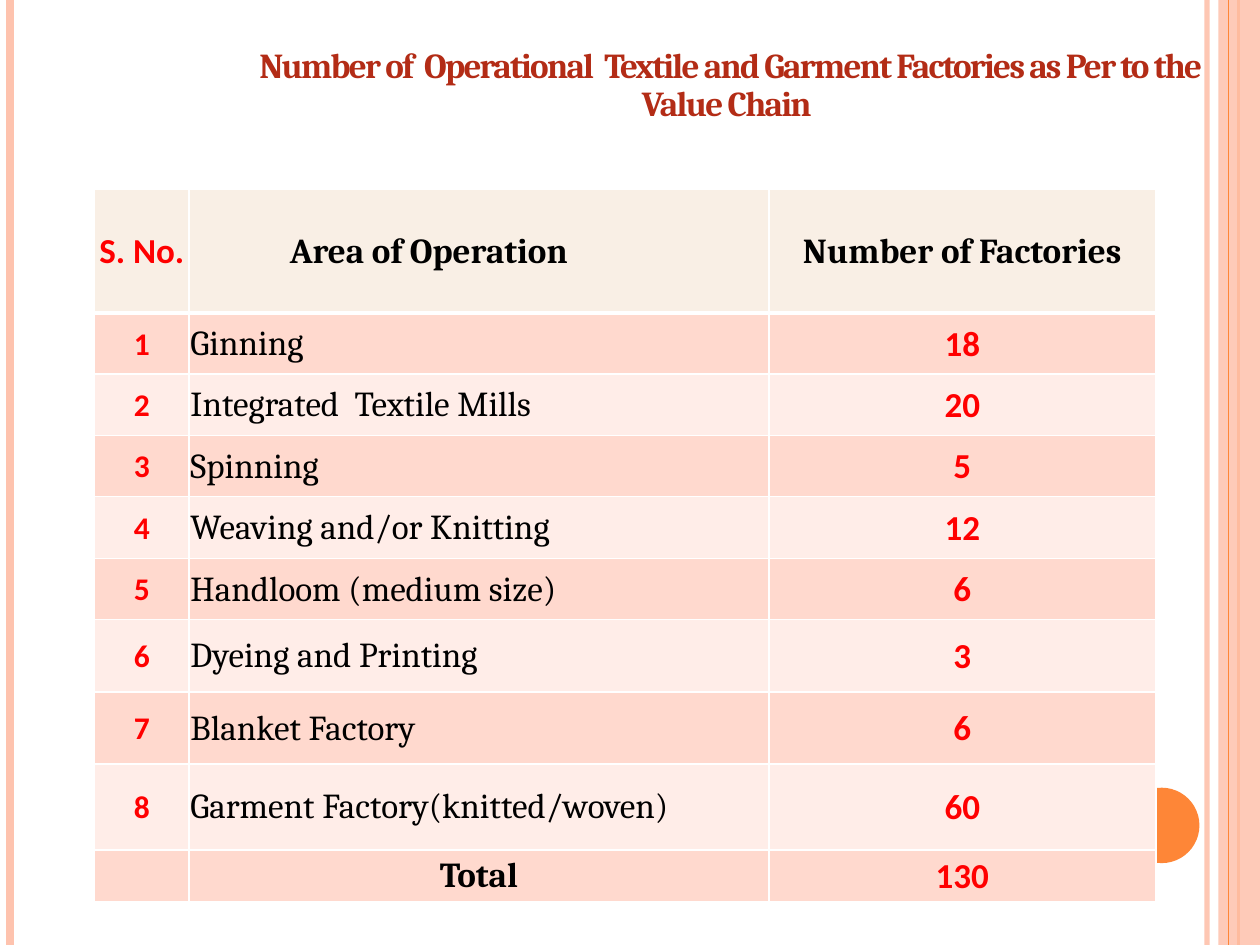
from lxml import etree
from pptx import Presentation
from pptx.dml.color import RGBColor
from pptx.enum.shapes import MSO_CONNECTOR, MSO_SHAPE
from pptx.enum.text import MSO_ANCHOR, MSO_AUTO_SIZE, PP_ALIGN
from pptx.oxml import parse_xml
from pptx.oxml.ns import nsdecls, qn
from pptx.util import Cm, Pt

CENTER, LEFT = PP_ALIGN.CENTER, PP_ALIGN.LEFT
MIDDLE, TOP = MSO_ANCHOR.MIDDLE, MSO_ANCHOR.TOP
STRAIGHT = MSO_CONNECTOR.STRAIGHT
RECTANGLE, OVAL = MSO_SHAPE.RECTANGLE, MSO_SHAPE.OVAL

THEME = {
    "peach": "FEC3AE", "orange": "FE8637", "header": "CC6600",
    "bands": ("FFEDE8", "FFD9CE"), "border": "FFFFFF",
    "title": "B32C16", "red": "FF0000", "black": "000000",
    "serif": "Cambria", "sans": "Calibri",
    "text_size": 20, "index_size": 18,
}


def set_opacity(fill, colour, percent):
    """Make the fill solid and, below 100 percent, see-through."""
    fill.solid()
    fill.fore_color.rgb = RGBColor.from_string(colour)
    if percent < 100:
        solid = fill._xPr.find(qn("a:solidFill"))
        etree.SubElement(solid[0], qn("a:alpha"), val=str(percent * 1000))


def write_text(para, text, face, colour, size, bold, align):
    para.alignment = align
    span = para.add_run()
    span.text = text
    formats = {"name": face, "size": Pt(size), "bold": bold}
    for name, value in formats.items():
        setattr(span.font, name, value)
    span.font.color.rgb = RGBColor.from_string(colour)
    return span


deck = Presentation()
deck.slide_width, deck.slide_height = Cm(25.4), Cm(19.05)
page = deck.slides.add_slide(deck.slide_layouts[5])

# Side stripes and circle: x, width in points, colour, opacity
back_stripes = [
    (24.33, 3, THEME["peach"], 93),
    (0.2, 4.5, THEME["peach"], 100),
    (24.97, 1.5, THEME["orange"], 100),
]
front_stripes = [(24.77, 0.75, THEME["orange"], 100)]
side_band = [(RECTANGLE, 24.56, 0, 0.84, 19.05, THEME["peach"], 87)]
circle = [(OVAL, 22.66, 15.88, 1.52, 1.52, THEME["orange"], 100)]

for stripes, solids in ((back_stripes, side_band), (front_stripes, circle)):
    for x, width, colour, opacity in stripes:
        stripe = page.shapes.add_connector(STRAIGHT, Cm(x), 0, Cm(x), deck.slide_height)
        stripe.line.width = Pt(width)
        set_opacity(stripe.line.fill, colour, opacity)
        etree.SubElement(stripe._element.spPr, qn("a:effectLst"))
    for kind, left, top, width, height, colour, opacity in solids:
        solid = page.shapes.add_shape(kind, Cm(left), Cm(top), Cm(width), Cm(height))
        solid.shadow.inherit = False
        solid.line.fill.background()
        set_opacity(solid.fill, colour, opacity)

# Title, brought in front of the stripes
title = page.shapes.title
page.shapes._spTree.append(title._element)
title_place = {"left": 4.45, "top": 0.84, "width": 20.52, "height": 1.9}
for name, value in title_place.items():
    setattr(title, name, Cm(value))
title_format = {"word_wrap": True, "auto_size": MSO_AUTO_SIZE.NONE, "vertical_anchor": TOP}
for name, value in title_format.items():
    setattr(title.text_frame, name, value)
heading = title.text_frame.paragraphs[0]
heading.line_spacing = 0.9
span = write_text(
    heading,
    "Number of  Operational  Textile and Garment Factories as Per to the Value Chain ",
    THEME["serif"], THEME["title"], THEME["text_size"], True, CENTER)
span.font._element.set("spc", "-100")

# Table of factories
factories = [
    ("Ginning", 18),
    ("Integrated  Textile Mills", 20),
    ("Spinning", 5),
    ("Weaving and/or Knitting", 12),
    ("Handloom (medium size)", 6),
    ("Dyeing and Printing", 3),
    ("Blanket Factory", 6),
    ("Garment Factory(knitted/woven)", 60),
]
rows = [("S. No.", "Area of Operation", "Number of Factories")]
rows += [(str(index), area, str(count))
         for index, (area, count) in enumerate(factories, start=1)]
rows.append(("", "Total", str(sum(count for area, count in factories))))
column_widths = (1.9, 11.69, 7.8)
row_heights = (2.5, 1.23, 1.24, 1.23, 1.25, 1.23, 1.46, 1.45, 1.73, 1.04)

table = page.shapes.add_table(
    len(rows), len(column_widths), Cm(1.91), Cm(3.81),
    Cm(sum(column_widths)), Cm(sum(row_heights))).table
table.first_row = table.horz_banding = False
for column, width in zip(table.columns, column_widths):
    column.width = Cm(width)
for row, height in zip(table.rows, row_heights):
    row.height = Cm(height)

cell_format = {
    "vertical_anchor": MIDDLE, "margin_left": Cm(0.03), "margin_top": Cm(0.03),
    "margin_right": Cm(0.03), "margin_bottom": 0,
}
last_row = len(rows) - 1
for row_index, texts in enumerate(rows):
    is_header = row_index == 0
    is_body = 0 < row_index < last_row
    for column_index, text in enumerate(texts):
        cell = table.cell(row_index, column_index)
        for name, value in cell_format.items():
            setattr(cell, name, value)
        border_widths = {
            "L": 1, "R": 1,
            "T": 3 if row_index == 1 else 1,
            "B": 3 if is_header else 1,
        }
        for side, width in border_widths.items():
            cell._tc.get_or_add_tcPr().append(parse_xml(
                f'<a:ln{side} {nsdecls("a")} w="{Pt(width)}"><a:solidFill>'
                f'<a:srgbClr val="{THEME["border"]}"/></a:solidFill></a:ln{side}>'))
        if is_header:
            set_opacity(cell.fill, THEME["header"], 10)
        else:
            set_opacity(cell.fill, THEME["bands"][row_index % 2], 100)
        if not text:
            continue
        is_area = column_index == 1
        is_serif = is_area or (is_header and column_index == 2)
        is_index = is_body and column_index == 0
        write_text(
            cell.text_frame.paragraphs[0], text,
            THEME["serif"] if is_serif else THEME["sans"],
            THEME["black"] if is_serif else THEME["red"],
            THEME["index_size"] if is_index else THEME["text_size"],
            not (is_body and is_area),
            LEFT if is_body and is_area else CENTER)

# The area heading sits left of its column's centre
table.cell(0, 1).margin_right = Cm(2.05)

deck.save("out.pptx")
